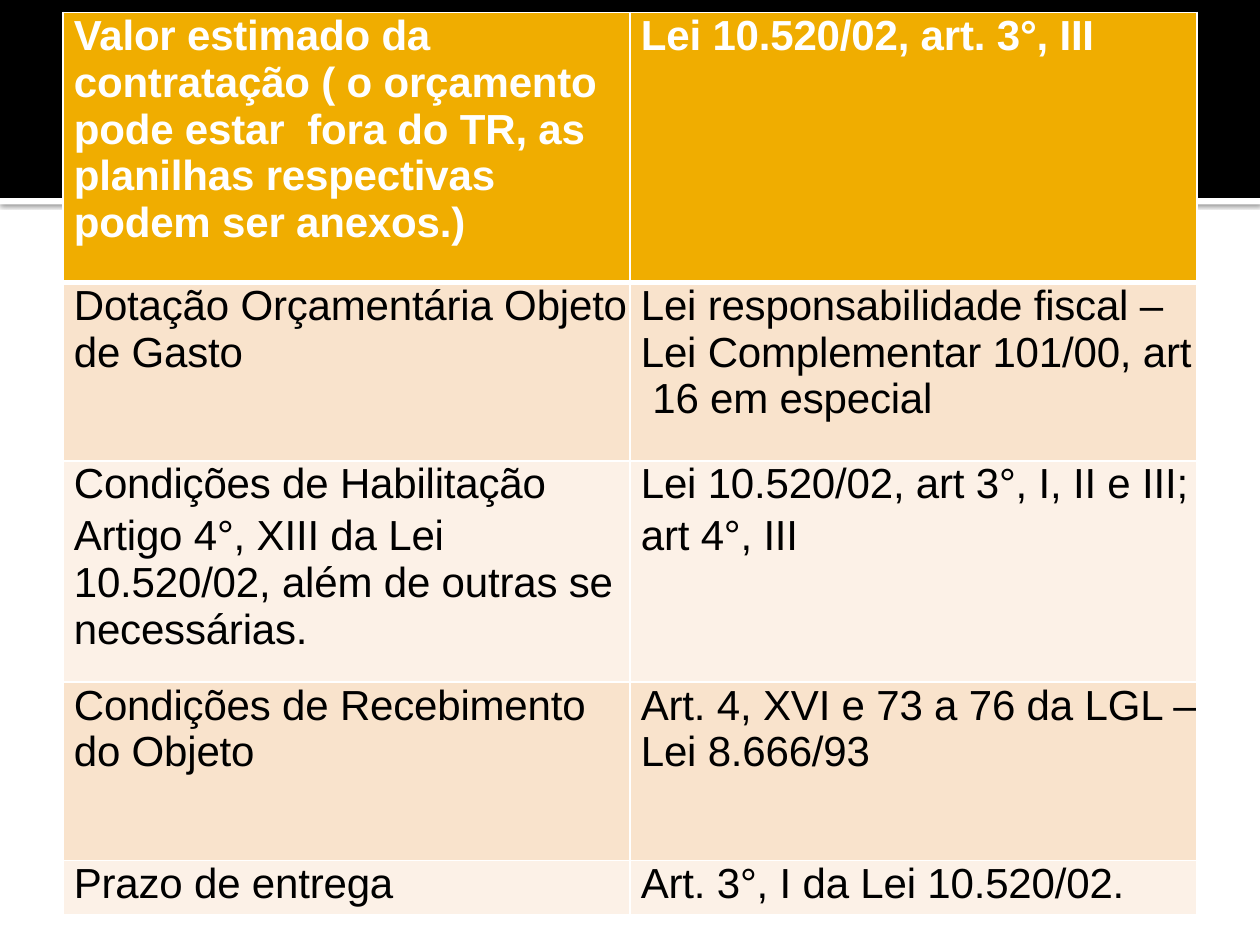
from lxml.etree import SubElement
from pptx import Presentation
from pptx.dml.color import RGBColor
from pptx.enum.shapes import MSO_SHAPE
from pptx.oxml import parse_xml
from pptx.oxml.ns import qn
from pptx.util import Cm, Pt

REQUIREMENTS = [
    (["Valor estimado da contratação ( o orçamento pode estar  fora do TR, as "
      "planilhas respectivas podem ser anexos.)"],
     ["Lei 10.520/02, art. 3°, III"]),
    (["Dotação Orçamentária Objeto de Gasto"],
     ["Lei responsabilidade fiscal – Lei Complementar 101/00, art  16 em especial"]),
    (["Condições de Habilitação",
      "Artigo 4°, XIII da Lei 10.520/02, além de outras se  necessárias."],
     ["Lei 10.520/02, art 3°, I, II e III;", "art 4°, III"]),
    (["Condições de Recebimento do Objeto"],
     ["Art. 4, XVI e 73 a 76 da LGL – Lei 8.666/93"]),
    (["Prazo de entrega"], ["Art. 3°, I da Lei 10.520/02."]),
]
ROW_HEIGHTS = [5.44, 3.6, 4.46, 3.6, 1.09]
COLUMN_WIDTH = 11.43
HEADER, BANDS = "F0AD00", ("FCF1E7", "F9E3CC")
WHITE, BLACK = "FFFFFF", "000000"
DRAWING_NS = "http://schemas.openxmlformats.org/drawingml/2006/main"


def paint(fill, color):
    fill.solid()
    fill.fore_color.rgb = RGBColor.from_string(color)


def add_band(slide, top, height, color):
    band = slide.shapes.add_shape(MSO_SHAPE.RECTANGLE, 0, Cm(top), Cm(25.4), Cm(height))
    band.shadow.inherit = False
    paint(band.fill, color)
    band.line.fill.background()
    return band


def add_shadow(band):
    effects = band._element.spPr.find(qn("a:effectLst"))
    effects.append(parse_xml(
        f'<a:outerShdw xmlns:a="{DRAWING_NS}" blurRad="31750" dist="10160" dir="5400000" '
        f'algn="t" rotWithShape="0"><a:srgbClr val="{BLACK}"><a:alpha val="60000"/>'
        '</a:srgbClr></a:outerShdw>'))


def write(paragraph, text, *, color=BLACK, bold=False, size=24, before=2.6, tracking=-0.1):
    paragraph.space_before = Pt(before)
    run = paragraph.add_run()
    run.text = text
    run.font.name = "Arial"
    run.font.size = Pt(size)
    run.font.bold = bold
    run.font.color.rgb = RGBColor.from_string(color)
    run.font._element.set("spc", str(round(tracking * 100)))


def set_borders(cell, widths):
    properties = cell._tc.get_or_add_tcPr()
    for position, (side, width) in enumerate(widths.items()):
        border = SubElement(properties, qn(f"a:ln{side}"), w=str(Pt(width)))
        fill = SubElement(border, qn("a:solidFill"))
        SubElement(fill, qn("a:srgbClr"), val=WHITE)
        properties.insert(position, border)


def add_requirements(slide):
    frame = slide.shapes.add_table(len(REQUIREMENTS), 2, Cm(1.27), Cm(0.25),
                                   Cm(2 * COLUMN_WIDTH), Cm(sum(ROW_HEIGHTS)))
    table = frame.table
    table.horz_banding = False
    for column in table.columns:
        column.width = Cm(COLUMN_WIDTH)
    for row, (height, entries) in enumerate(zip(ROW_HEIGHTS, REQUIREMENTS)):
        table.rows[row].height = Cm(height)
        is_header = row == 0
        for column, lines in enumerate(entries):
            cell = table.cell(row, column)
            cell.margin_left = Cm(0.22)
            cell.margin_right = cell.margin_top = cell.margin_bottom = 0
            paint(cell.fill, HEADER if is_header else BANDS[row % 2])
            set_borders(cell, {"L": 1, "R": 1, "T": 3 if row == 1 else 1,
                               "B": 3 if is_header else 1})
            for index, line in enumerate(lines):
                text_frame = cell.text_frame
                paragraph = text_frame.add_paragraph() if index else text_frame.paragraphs[0]
                write(paragraph, line, color=WHITE if is_header else BLACK, bold=is_header,
                      before=2.9 if index else 2.6 if row < 3 else 2.8)


def main():
    """Build the slide listing requirements and their legal basis."""
    deck = Presentation()
    deck.slide_width, deck.slide_height = Cm(25.4), Cm(19.05)
    slide = deck.slides.add_slide(deck.slide_layouts[6])
    paint(slide.background.fill, WHITE)
    add_shadow(add_band(slide, 3.99, 0.13, WHITE))
    add_band(slide, 0, 3.99, BLACK)
    add_requirements(slide)
    deck.save("out.pptx")


if __name__ == "__main__":
    main()
